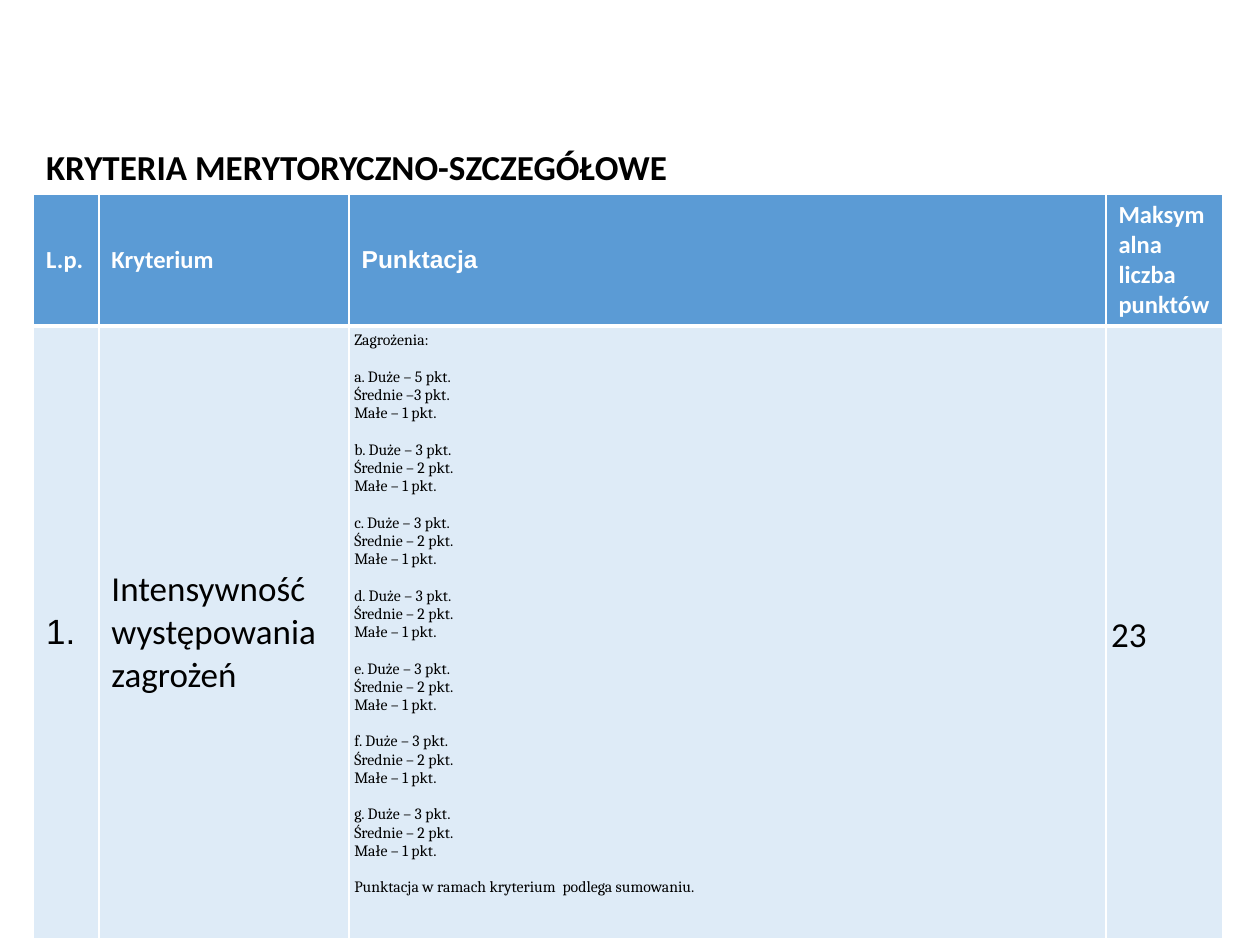
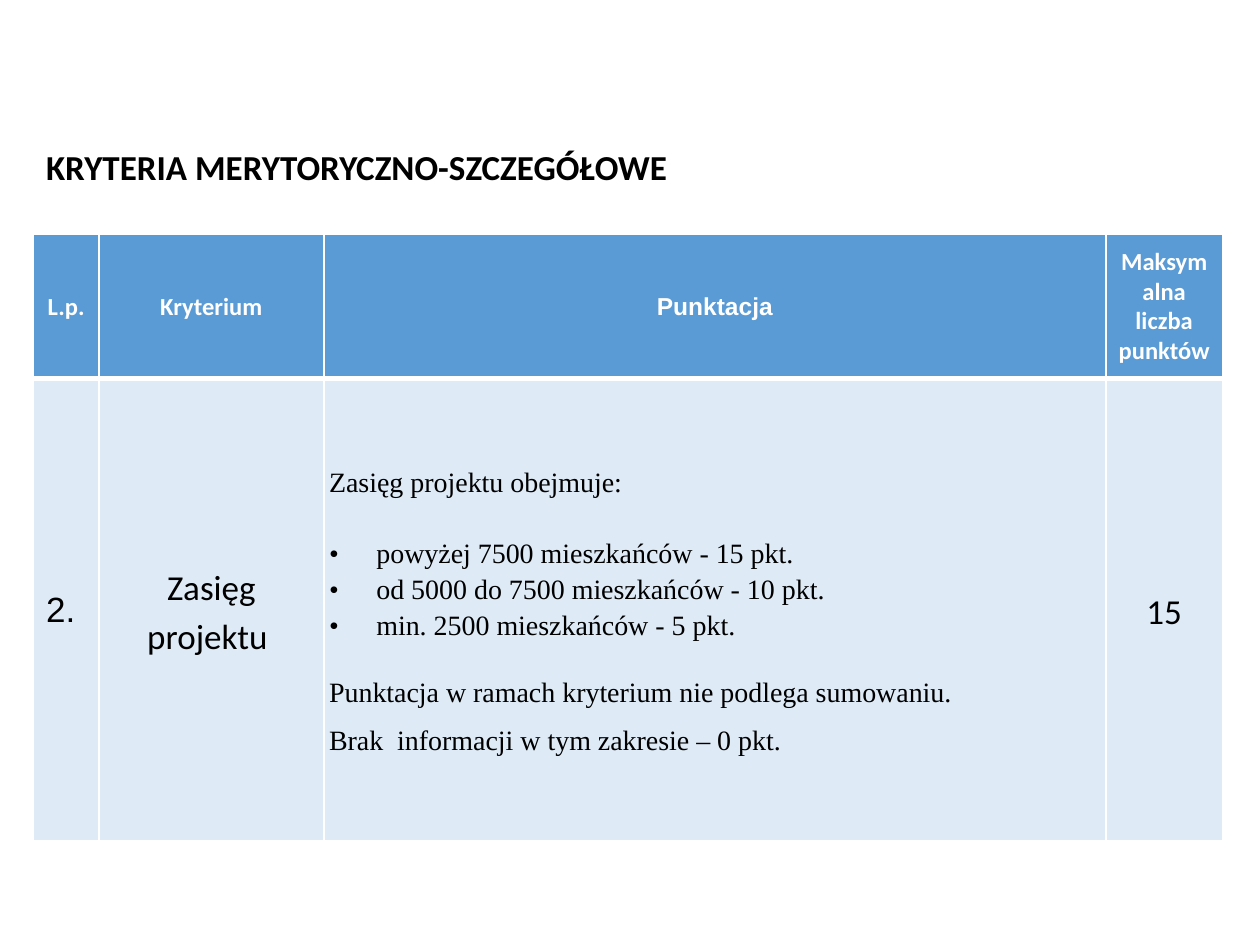
from dataclasses import dataclass

from lxml import etree
from pptx import Presentation
from pptx.dml.color import RGBColor
from pptx.enum.text import MSO_ANCHOR, MSO_AUTO_SIZE, PP_ALIGN
from pptx.oxml.ns import qn
from pptx.util import Pt

LEFT, CENTER, JUSTIFY = PP_ALIGN.LEFT, PP_ALIGN.CENTER, PP_ALIGN.JUSTIFY
TOP, MIDDLE = MSO_ANCHOR.TOP, MSO_ANCHOR.MIDDLE
NO_AUTOFIT = MSO_AUTO_SIZE.NONE

WHITE, BLACK = "FFFFFF", "000000"
HEADER_FILL, BODY_FILL = "5B9BD5", "DEEBF7"
SANS, ARIAL, CAMBRIA, TIMES = "Calibri", "Arial", "Cambria", "Times New Roman"

TITLE = "KRYTERIA MERYTORYCZNO-SZCZEGÓŁOWE"
HEADINGS = ["L.p.", "Kryterium", "Punktacja", "Maksymalna liczba punktów"]
LEFT_EDGE = 19.1
WIDE_MARGIN, NARROW_MARGIN = (7.2, 3.6), (3, 3)
HEADER_BORDERS = {"lnL": 1, "lnR": 1, "lnT": 1, "lnB": 3}
BODY_BORDERS = {"lnL": 1, "lnR": 1, "lnT": 3, "lnB": 1}
BULLET_INDENT = 27


@dataclass
class Line:
    """One paragraph with its look."""

    text: str
    size: float = 20
    font: str = SANS
    color: str = BLACK
    bold: bool = False
    align: PP_ALIGN = LEFT
    spacing: float = 1.0
    before: float = 0
    after: float = 0
    bullet: bool = False


def rgb(value):
    """Turn a hex string into a colour."""
    return RGBColor.from_string(value)


def add_bullet(paragraph):
    """Give the paragraph a round bullet and a hanging indent."""
    properties = paragraph._p.get_or_add_pPr()
    properties.set("marL", str(Pt(BULLET_INDENT)))
    properties.set("indent", str(-Pt(BULLET_INDENT)))
    etree.SubElement(properties, qn("a:buFont")).set("typeface", TIMES)
    etree.SubElement(properties, qn("a:buChar")).set("char", "•")


def set_borders(cell, widths):
    """Draw white borders of the given widths around a cell."""
    properties = cell._tc.get_or_add_tcPr()
    for index, (side, width) in enumerate(widths.items()):
        border = etree.Element(qn(f"a:{side}"), w=str(Pt(width)))
        fill = etree.SubElement(border, qn("a:solidFill"))
        etree.SubElement(fill, qn("a:srgbClr")).set("val", WHITE)
        properties.insert(index, border)


def write_lines(text_frame, lines):
    """Write each line as a formatted paragraph."""
    for index, line in enumerate(lines):
        paragraph = text_frame.add_paragraph() if index else text_frame.paragraphs[0]
        if line.bullet:
            add_bullet(paragraph)
        paragraph.alignment = line.align
        paragraph.line_spacing = line.spacing
        paragraph.space_before = Pt(line.before)
        paragraph.space_after = Pt(line.after)
        run = paragraph.add_run()
        run.text = line.text
        run.font.size = Pt(line.size)
        run.font.name = line.font
        run.font.bold = line.bold
        run.font.color.rgb = rgb(line.color)


def fill_cell(cell, lines, margins=WIDE_MARGIN, anchor=MIDDLE,
              fill=BODY_FILL, borders=BODY_BORDERS):
    """Set the fill, borders, margins and text of a table cell."""
    cell.fill.solid()
    cell.fill.fore_color.rgb = rgb(fill)
    set_borders(cell, borders)
    cell.margin_left = cell.margin_right = Pt(margins[0])
    cell.margin_top = cell.margin_bottom = Pt(margins[1])
    cell.vertical_anchor = anchor
    write_lines(cell.text_frame, lines)


def add_criteria_slide(presentation):
    """Add a slide with the shared title."""
    slide = presentation.slides.add_slide(presentation.slide_layouts[5])
    title = slide.shapes.title
    title.left, title.top = Pt(LEFT_EDGE), Pt(79.2)
    title.width, title.height = Pt(383), Pt(31.7)
    title.text_frame.auto_size = NO_AUTOFIT
    title.text_frame.vertical_anchor = MIDDLE
    write_lines(title.text_frame, [Line(TITLE, bold=True)])
    return slide


def add_criteria_table(slide, top, column_widths, row_heights, heading_align):
    """Add a table with its heading row and return it."""
    frame = slide.shapes.add_table(
        len(row_heights), len(column_widths), Pt(LEFT_EDGE), Pt(top),
        Pt(sum(column_widths)), Pt(sum(row_heights)))
    table = frame.table
    for column, width in zip(table.columns, column_widths):
        column.width = Pt(width)
    for row, height in zip(table.rows, row_heights):
        row.height = Pt(height)
    for cell, heading in zip(table.rows[0].cells, HEADINGS):
        font = ARIAL if heading == "Punktacja" else SANS
        fill_cell(cell, [Line(heading, 14, font, WHITE, True, heading_align)],
                  fill=HEADER_FILL, borders=HEADER_BORDERS)
    return table


def threat_lines():
    """List the points for threats a to g."""
    def small(text, before=0):
        return Line(text, 9, CAMBRIA, before=before)

    gap = 10.4
    lines = [small("Zagrożenia:")]
    for letter in "abcdefg":
        high, medium = (5, "–3") if letter == "a" else (3, "– 2")
        lines += [small(f"{letter}. Duże – {high} pkt.", gap),
                  small(f"Średnie {medium} pkt."),
                  small("Małe – 1 pkt.")]
    lines.append(small("Punktacja w ramach kryterium  podlega sumowaniu.", gap))
    return lines


def reach_lines():
    """List the points for the project's reach."""
    def serif(text, **look):
        return Line(text, 16, TIMES, **look)

    ranges = ["powyżej 7500 mieszkańców - 15 pkt.",
              "od 5000 do 7500 mieszkańców - 10 pkt.",
              "min. 2500 mieszkańców - 5 pkt."]
    gap = 20.5
    return [
        serif("Zasięg projektu obejmuje:", spacing=1.15),
        *[serif(text, spacing=1.15, bullet=True, before=0 if index else gap)
          for index, text in enumerate(ranges)],
        serif("Punktacja w ramach kryterium nie podlega sumowaniu.",
              align=JUSTIFY, before=gap, after=10),
        serif("Brak  informacji w tym zakresie – 0 pkt."),
    ]


def add_threats_slide(presentation):
    """Build the slide on the intensity of threats."""
    slide = add_criteria_slide(presentation)
    table = add_criteria_table(slide, 111, [37.4, 143, 432.5, 66.6], [74.5, 350], LEFT)
    number, criterion, scoring, points = table.rows[1].cells
    fill_cell(number, [Line("1.", font=ARIAL)])
    fill_cell(criterion, [Line("Intensywność występowania zagrożeń")])
    fill_cell(scoring, threat_lines(), NARROW_MARGIN, TOP)
    fill_cell(points, [Line("23", spacing=1.15)], NARROW_MARGIN)


def add_reach_slide(presentation):
    """Build the slide on the reach of the project."""
    slide = add_criteria_slide(presentation)
    table = add_criteria_table(slide, 134, [37.4, 128.6, 446.9, 66.6], [82.4, 264.2], CENTER)
    number, criterion, scoring, points = table.rows[1].cells
    fill_cell(number, [Line("2.", font=ARIAL)])
    fill_cell(criterion, [Line("Zasięg projektu ", align=CENTER, spacing=1.15)],
              NARROW_MARGIN)
    fill_cell(scoring, reach_lines(), NARROW_MARGIN)
    fill_cell(points, [Line("15", align=CENTER, spacing=1.15)], NARROW_MARGIN)


def main():
    """Build and save the presentation."""
    presentation = Presentation()
    presentation.slide_width, presentation.slide_height = Pt(720), Pt(540)
    add_threats_slide(presentation)
    add_reach_slide(presentation)
    presentation.save("out.pptx")


if __name__ == "__main__":
    main()
